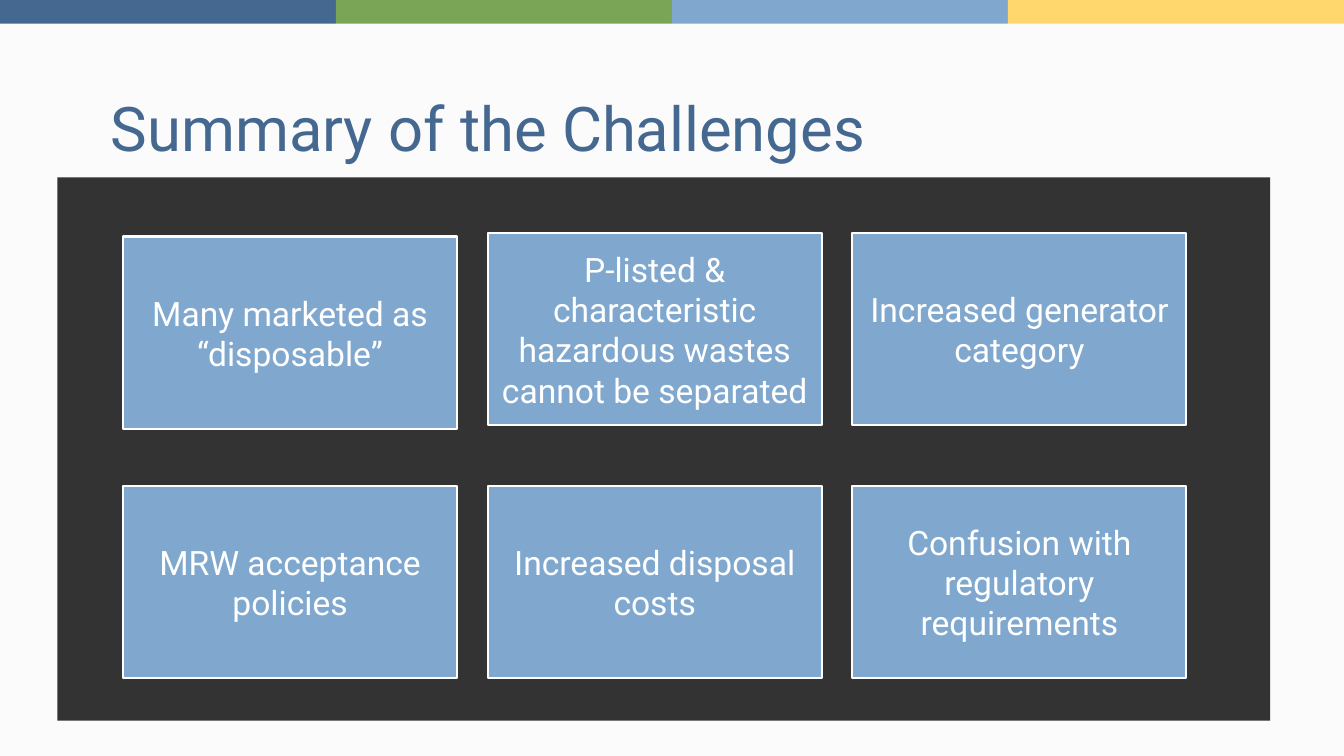
import pptx
import pptx.dml.color
import pptx.enum.shapes
import pptx.enum.text
import pptx.util

Cm = pptx.util.Cm
Pt = pptx.util.Pt

COLORS = {
    "paper": "FBFBFB",
    "navy": "44688F",
    "green": "7AA456",
    "sky": "80A8CE",
    "yellow": "FFD76D",
    "charcoal": "333333",
    "white": "FFFFFF",
}
SLIDE_WIDTH, SLIDE_HEIGHT = 33.87, 19.05


class SlideBuilder:
    """Holds the style and the current slide."""

    font_name = "Roboto"

    def __init__(self, deck):
        self.slide = deck.slides.add_slide(deck.slide_layouts[5])
        self.paint(self.slide.background.fill, "paper")

    def paint(self, fill, color):
        fill.solid()
        fill.fore_color.rgb = pptx.dml.color.RGBColor.from_string(COLORS[color])

    def set_text(self, frame, text, size, color, align, anchor):
        frame.text = text
        frame.word_wrap = True
        frame.auto_size = pptx.enum.text.MSO_AUTO_SIZE.NONE
        frame.vertical_anchor = anchor
        para = frame.paragraphs[0]
        para.alignment = align
        for span in para.runs:
            span.font.name = self.font_name
            span.font.size = Pt(size)
            span.font.color.rgb = pptx.dml.color.RGBColor.from_string(COLORS[color])

    def title(self, text, left, top, width, height, indent):
        box = self.slide.shapes.title
        box.left, box.top, box.width, box.height = map(Cm, (left, top, width, height))
        self.set_text(box.text_frame, text, 44, "navy",
                      pptx.enum.text.PP_ALIGN.LEFT, pptx.enum.text.MSO_ANCHOR.BOTTOM)
        box.text_frame.margin_left = Cm(indent)
        box.text_frame.paragraphs[0].line_spacing = 0.9

    def block(self, left, top, width, height, color):
        box = self.slide.shapes.add_shape(
            pptx.enum.shapes.MSO_SHAPE.RECTANGLE, *map(Cm, (left, top, width, height)))
        box.shadow.inherit = False
        self.paint(box.fill, color)
        box.line.fill.background()
        return box

    def card(self, text, left, top, width, height):
        box = self.block(left, top, width, height, "sky")
        self.paint(box.line.fill, "white")
        box.line.width = Pt(1.5)
        self.set_text(box.text_frame, text, 24, "white",
                      pptx.enum.text.PP_ALIGN.CENTER, pptx.enum.text.MSO_ANCHOR.MIDDLE)


def main():
    deck = pptx.Presentation()
    deck.slide_width, deck.slide_height = Cm(SLIDE_WIDTH), Cm(SLIDE_HEIGHT)
    page = SlideBuilder(deck)

    # Colour band along the top
    bands = ["navy", "green", "sky", "yellow"]
    band_width = SLIDE_WIDTH / len(bands)
    for index, color in enumerate(bands):
        page.block(index * band_width, 0, band_width, 0.6, color)

    # Title
    page.title("Summary of the Challenges", 0, 1.09, 30.28, 3.18, indent=2.79)

    # Dark panel
    page.block(1.45, 4.47, 30.56, 13.69, "charcoal")

    # Challenge cards; the first sits slightly lower than its row
    rows = [
        (5.87, ["Many marketed as “disposable”",
                "P-listed & characteristic hazardous wastes cannot be separated",
                "Increased generator category"]),
        (12.24, ["MRW acceptance policies",
                 "Increased disposal costs",
                 "Confusion with regulatory requirements"]),
    ]
    first_card_drop = 0.09
    for row, (top, challenges) in enumerate(rows):
        for column, challenge in enumerate(challenges):
            drop = first_card_drop if row == column == 0 else 0
            page.card(challenge, 3.1 + column * 9.19, top + drop, 8.42, 4.85)

    deck.save("out.pptx")


if __name__ == "__main__":
    main()
